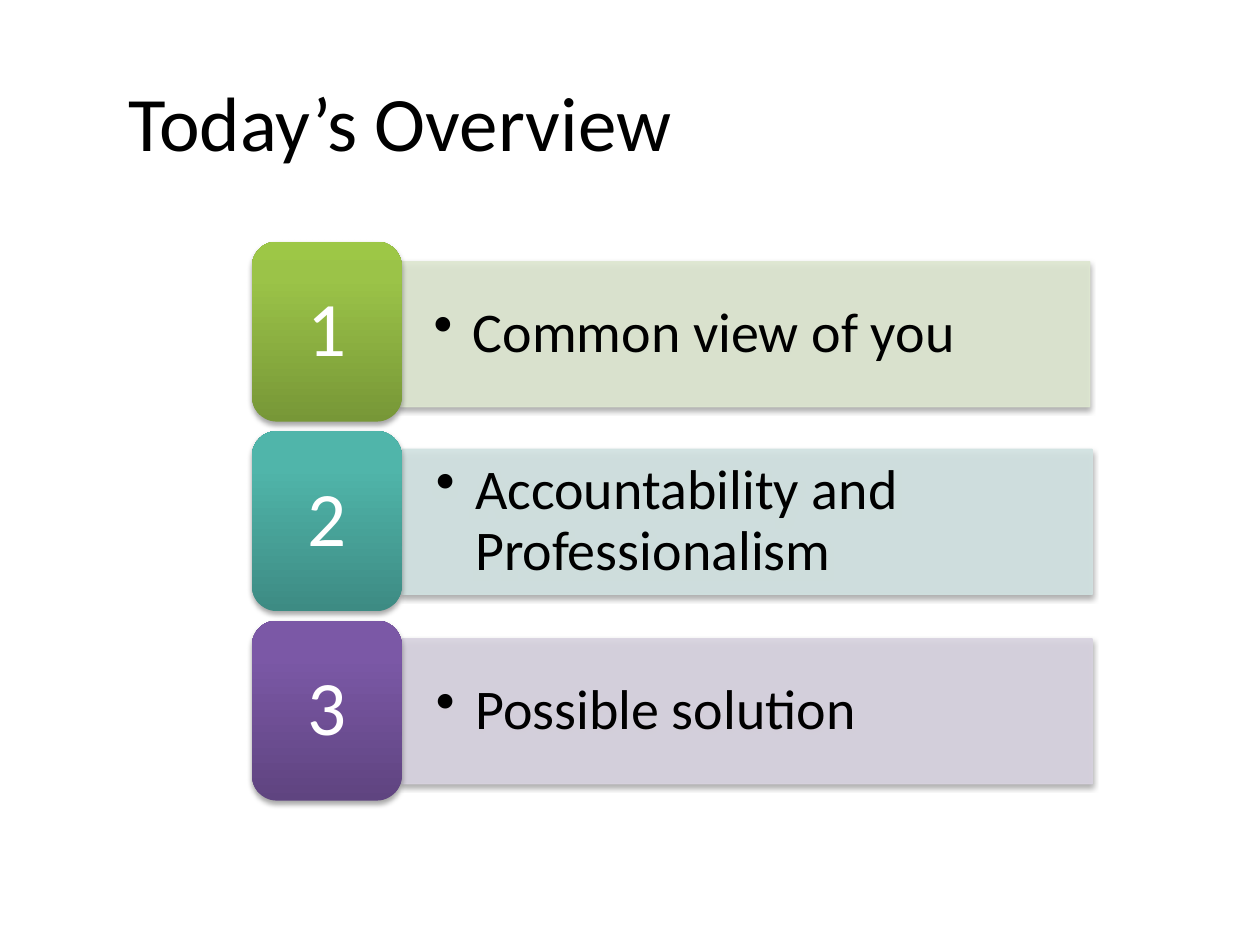
"""Build the overview slide with three numbered topic bars."""
from dataclasses import dataclass

from lxml.etree import SubElement as add_element
from pptx import Presentation
from pptx.dml.color import RGBColor as Color
from pptx.enum.shapes import MSO_SHAPE as Preset
from pptx.enum.text import MSO_ANCHOR as Anchor, PP_ALIGN as Align
from pptx.oxml.ns import qn
from pptx.shapes.autoshape import Shape
from pptx.slide import Slide
from pptx.util import Cm, Pt

COLORS = {
    "text": "000000", "number": "FFFFFF", "shadow": "000000",
    "green_bar": "DEE7D1", "teal_bar": "D2E3E2", "purple_bar": "D8D3E0",
    "green_low": "779737", "green_mid": "9BC348", "green_high": "9DC746",
    "teal_low": "3D8B83", "teal_mid": "50B5AA", "teal_high": "4EB8AC",
    "purple_low": "5F4480", "purple_mid": "7B58A6", "purple_high": "7C57A8",
}
FIRST_TOP, PITCH = 4.87, 3.82
BADGE_LEFT, BADGE_WIDTH, BADGE_HEIGHT = 5.08, 3.02, 3.63
BAR_WIDTH, BAR_HEIGHT = 13.92, 2.92
GRADIENT_STOPS = {"low": 0, "mid": 80000, "high": 100000}


@dataclass
class Topic:
    """A topic with its hue and the place of its bar in centimetres."""

    label: str
    hue: str
    bar_left: float = 8.1
    bar_drop: float = 0.37


TOPICS = [
    Topic("Common view of you", "green", bar_left=8.05, bar_drop=0.41),
    Topic("Accountability and Professionalism", "teal"),
    Topic("Possible solution", "purple"),
]


def set_all(target: object, values: dict) -> None:
    """Set every named attribute on the target."""
    for name, value in values.items():
        setattr(target, name, value)


def write_text(shape: Shape, text: str, size: int, color: str, align: Align,
               margins: tuple[float, float], bullet: bool = False) -> None:
    """Fill a shape with one formatted paragraph."""
    side, edge = (Cm(margin) for margin in margins)
    frame = shape.text_frame
    set_all(frame, {"word_wrap": True, "vertical_anchor": Anchor.MIDDLE,
                    "margin_left": side, "margin_right": side,
                    "margin_top": edge, "margin_bottom": edge})
    para = frame.paragraphs[0]
    span = para.add_run()
    span.text = text
    if bullet:
        props = para._p.get_or_add_pPr()
        props.set("marL", str(Cm(0.79)))
        props.set("indent", str(-Cm(0.79)))
        add_element(props, qn("a:buChar"), char="•")
    set_all(para, {"alignment": align, "line_spacing": 0.9})
    set_all(span.font, {"name": "Calibri", "size": Pt(size)})
    span.font.color.rgb = Color.from_string(COLORS[color])


def add_shadow(shape: Shape) -> None:
    """Give a shape a soft shadow below it."""
    shape.shadow.inherit = False
    effects = shape._element.spPr.find(qn("a:effectLst"))
    shadow = add_element(effects, qn("a:outerShdw"), blurRad=str(Pt(3.1)),
                         dist=str(Pt(1.8)), dir="5400000", rotWithShape="0")
    tint = add_element(shadow, qn("a:srgbClr"), val=COLORS["shadow"])
    add_element(tint, qn("a:alpha"), val="35000")


def add_bar(slide: Slide, topic: Topic, top: float) -> None:
    """Draw the pale bar that holds the topic label."""
    bar = slide.shapes.add_shape(
        Preset.RECTANGLE, Cm(topic.bar_left), Cm(top + topic.bar_drop),
        Cm(BAR_WIDTH), Cm(BAR_HEIGHT))
    color = Color.from_string(COLORS[f"{topic.hue}_bar"])
    bar.line.width = Pt(0.75)
    for fill in (bar.fill, bar.line.fill):
        fill.solid()
        fill.fore_color.rgb = color
    for tint in bar._element.spPr.iter(qn("a:srgbClr")):
        add_element(tint, qn("a:alpha"), val="90000")
    add_shadow(bar)
    write_text(bar, topic.label, 32, "text", Align.LEFT, (0.69, 0.36), bullet=True)


def add_badge(slide: Slide, topic: Topic, number: int, top: float) -> None:
    """Draw the rounded gradient badge with the topic number."""
    badge = slide.shapes.add_shape(
        Preset.ROUNDED_RECTANGLE, Cm(BADGE_LEFT), Cm(top),
        Cm(BADGE_WIDTH), Cm(BADGE_HEIGHT))
    badge.fill.gradient()
    badge.fill.gradient_angle = 90
    stops = badge._element.spPr.find(f".//{qn('a:gsLst')}")
    stops.clear()
    for shade, position in GRADIENT_STOPS.items():
        stop = add_element(stops, qn("a:gs"), pos=str(position))
        add_element(stop, qn("a:srgbClr"), val=COLORS[f"{topic.hue}_{shade}"])
    badge.line.fill.background()
    add_shadow(badge)
    write_text(badge, str(number), 44, "number", Align.CENTER, (0.46, 0.23))


def main() -> None:
    """Build and save the deck."""
    deck = Presentation()
    set_all(deck, {"slide_width": Cm(25.4), "slide_height": Cm(19.05)})
    slide = deck.slides.add_slide(deck.slide_layouts[5])
    title = slide.shapes.title
    set_all(title, {"left": Cm(2.34), "top": Cm(0.84),
                    "width": Cm(22.43), "height": Cm(3.18)})
    write_text(title, "Today’s Overview", 44, "text", Align.LEFT, (0.25, 0.13))
    title.text_frame.paragraphs[0].line_spacing = 1.0
    for index, topic in enumerate(TOPICS):
        top = FIRST_TOP + index * PITCH
        add_bar(slide, topic, top)
        add_badge(slide, topic, index + 1, top)
    deck.save("out.pptx")


if __name__ == "__main__":
    main()
